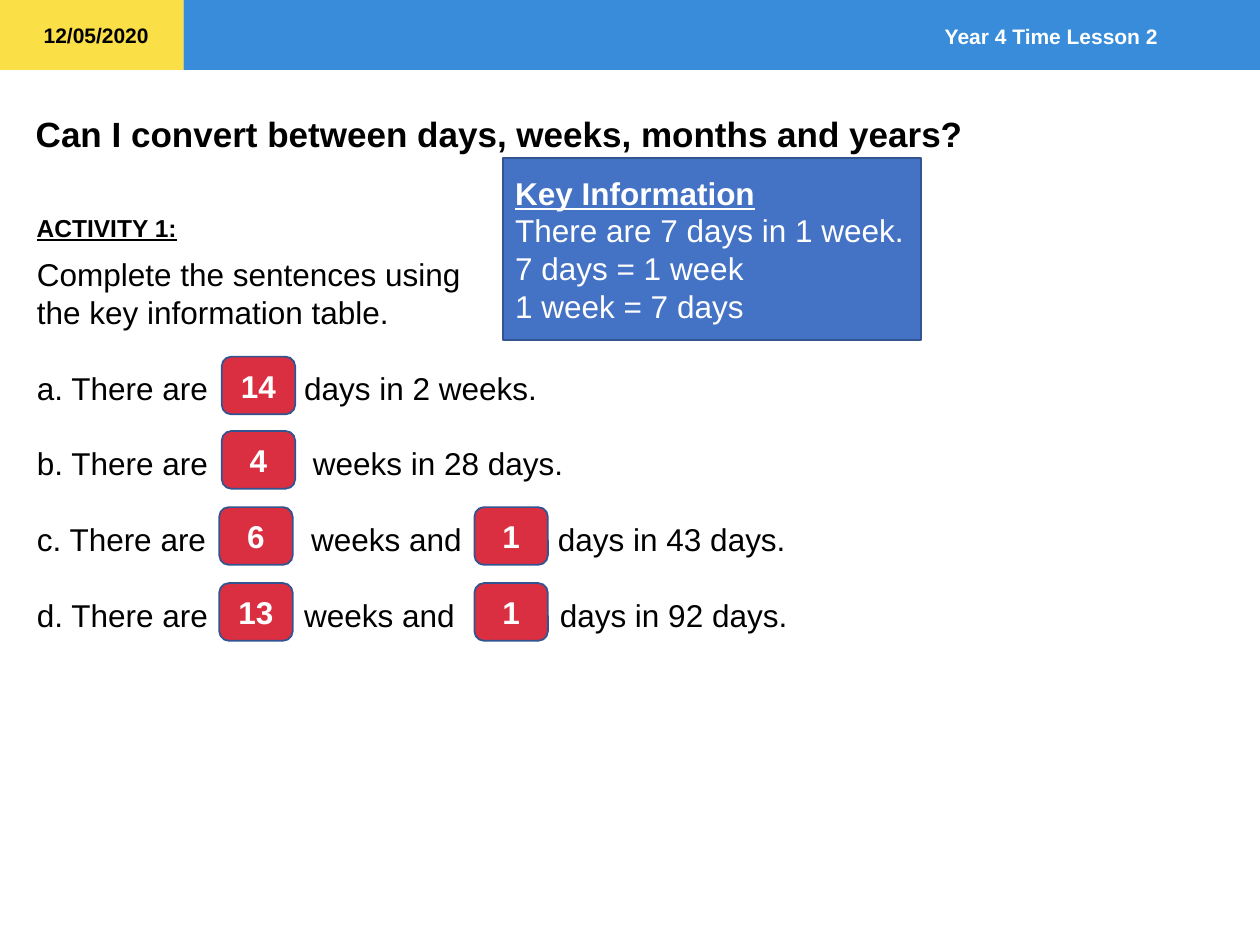
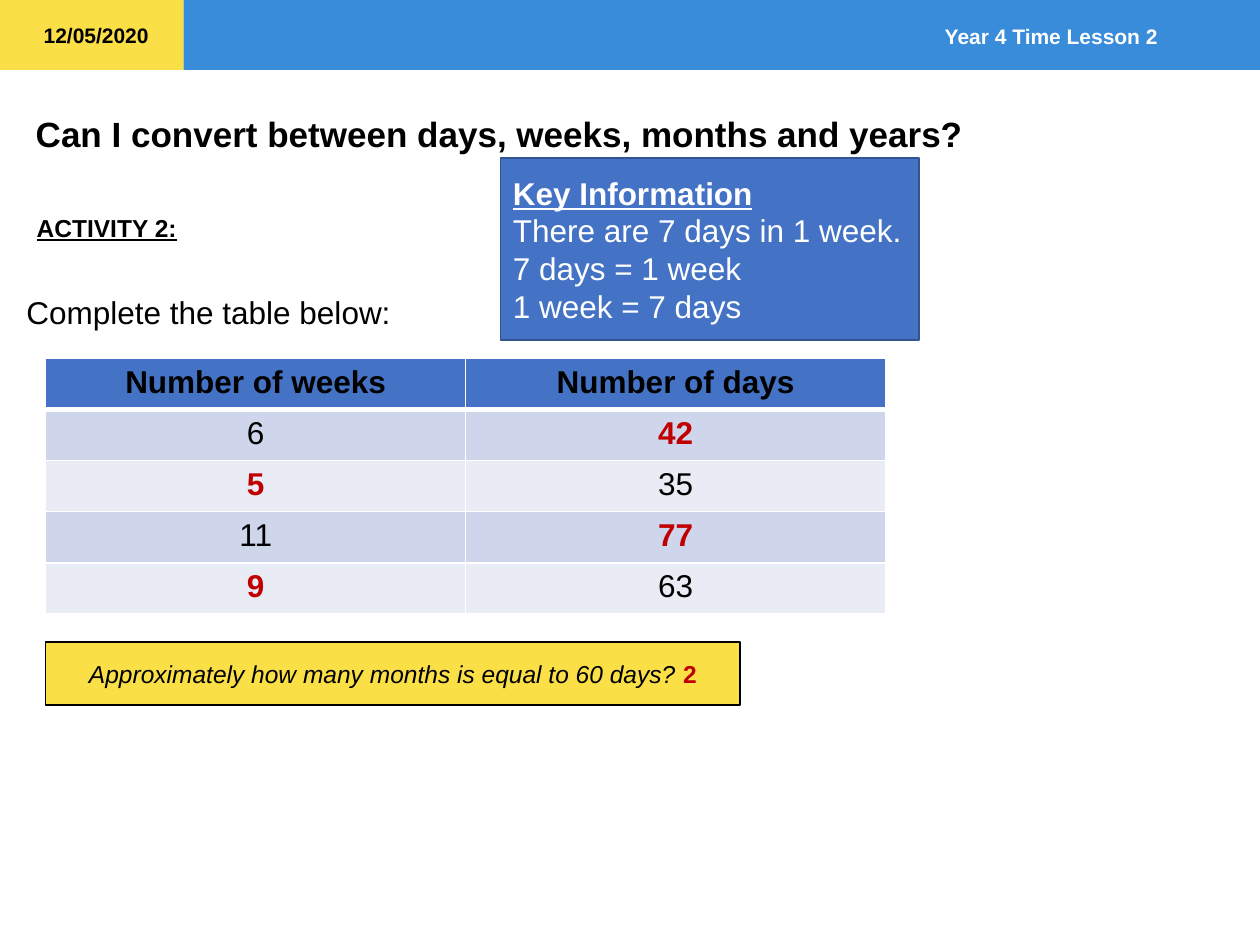
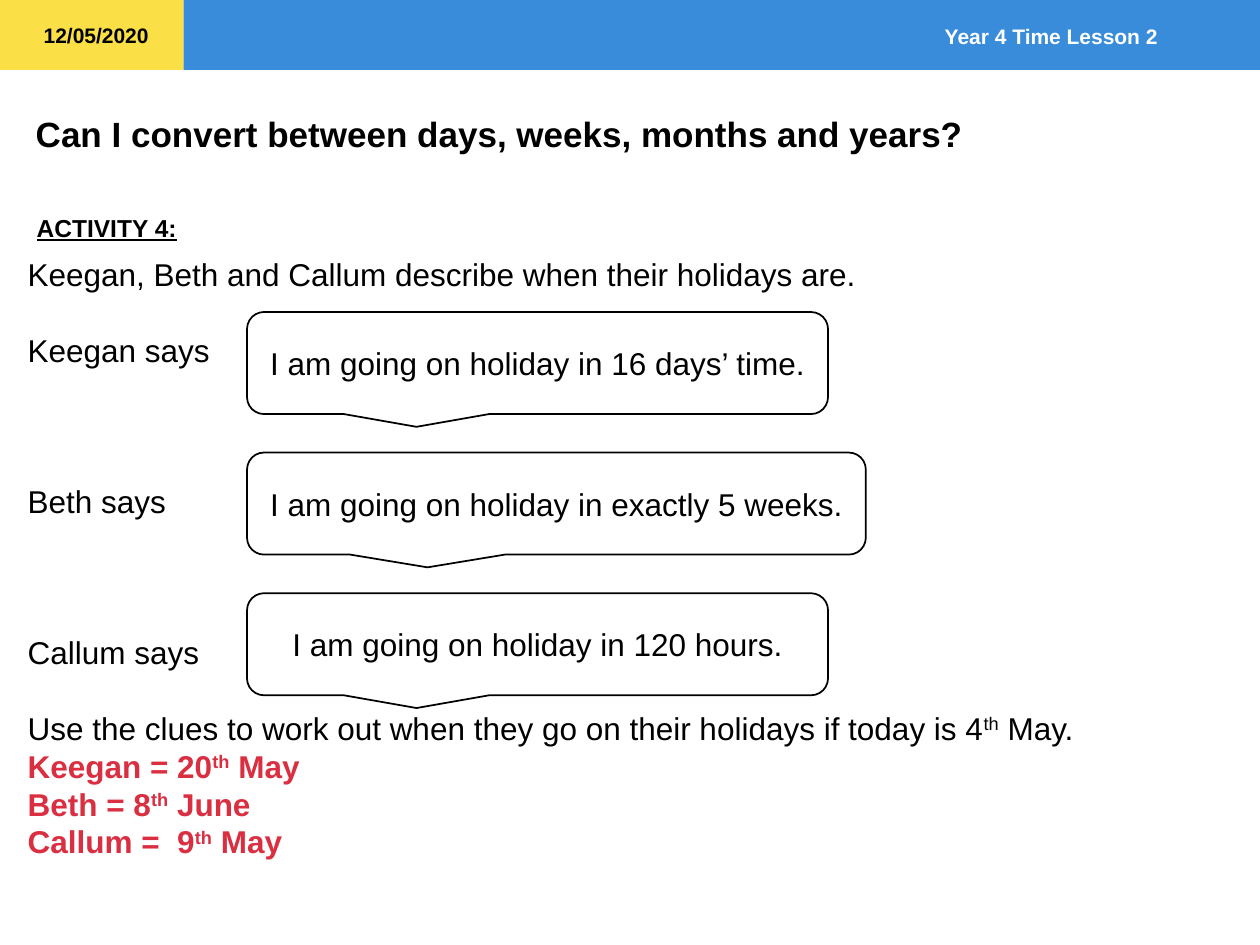
from dataclasses import dataclass

import lxml.etree
import pptx
import pptx.dml.color
import pptx.enum.shapes
import pptx.enum.text
import pptx.oxml
import pptx.oxml.ns
import pptx.util

Pt = pptx.util.Pt
RGBColor = pptx.dml.color.RGBColor
Shapes = pptx.enum.shapes.MSO_SHAPE
Align = pptx.enum.text.PP_ALIGN
Anchor = pptx.enum.text.MSO_ANCHOR
qn = pptx.oxml.ns.qn

# Shared style
FONT = "Arial"
BLACK = RGBColor(0x00, 0x00, 0x00)
WHITE = RGBColor(0xFF, 0xFF, 0xFF)
YELLOW = RGBColor(0xFA, 0xDF, 0x47)
SKY_BLUE = RGBColor(0x38, 0x8C, 0xDA)
BOX_BLUE = RGBColor(0x44, 0x72, 0xC4)
EDGE_BLUE = RGBColor(0x32, 0x54, 0x91)
ANSWER_RED = RGBColor(0xDA, 0x2E, 0x41)
TABLE_RED = RGBColor(0xC0, 0x00, 0x00)
ROW_FILLS = (RGBColor(0xCF, 0xD5, 0xEA), RGBColor(0xE9, 0xEB, 0xF5))

LINE_HEIGHT = 21.6
INSET = 3.6
BAND_HEIGHT = 40
DATE_WIDTH = 105
BODY_TOP = 142.3
NARROW_GAP, WIDE_GAP = 50, 55


@dataclass(frozen=True)
class Box:
    left: float
    top: float
    width: float
    height: float


@dataclass(frozen=True)
class Line:
    """Body line; ^ turns superscript on and off, _ is a gap for an answer."""
    text: str
    blank_lines: int = 0
    gaps: tuple[float, ...] = ()
    color: RGBColor = BLACK
    bold: bool = False


@dataclass(frozen=True)
class Answer:
    left: float
    top: float
    text: str


@dataclass(frozen=True)
class Speech:
    top: float
    width: float
    text: str


# Slide content
TITLE = "Can I convert between days, weeks, months and years?"
KEY_FACTS = ("There are 7 days in 1 week.", "7 days = 1 week", "1 week = 7 days")

SENTENCES = (
    Line("Complete the sentences using"),
    Line("the key information table."),
    Line("a. There are_days in 2 weeks.", 1, (NARROW_GAP,)),
    Line("b. There are_weeks in 28 days.", 1, (WIDE_GAP,)),
    Line("c. There are_weeks and_days in 43 days.", 1, (WIDE_GAP, NARROW_GAP)),
    Line("d. There are_weeks and_days in 92 days.", 1, (NARROW_GAP, WIDE_GAP)),
)
ANSWERS = (
    Answer(126.7, 203.8, "14"),
    Answer(126.7, 246.3, "4"),
    Answer(125.3, 289.8, "6"),
    Answer(271.1, 289.8, "1"),
    Answer(125.3, 333.2, "13"),
    Answer(271.1, 333.2, "1"),
)
TABLE_ROWS = (("Number of weeks", "Number of days"),
              ("6", "42"), ("5", "35"), ("11", "77"), ("9", "63"))
TABLE_ANSWERS = {"42", "5", "77", "9"}
HOLIDAYS = (
    Line("Keegan, Beth and Callum describe when their holidays are."),
    Line("Keegan says", 1),
    Line("Beth says", 3),
    Line("Callum says", 3),
    Line("Use the clues to work out when they go on their holidays "
         "if today is 4^th^ May.", 1),
    Line("Keegan = 20^th^ May", color=ANSWER_RED, bold=True),
    Line("Beth = 8^th^ June", color=ANSWER_RED, bold=True),
    Line("Callum =  9^th^ May", color=ANSWER_RED, bold=True),
)
SPEECHES = (
    Speech(178.3, 332, "I am going on holiday in 16 days’ time."),
    Speech(258.6, 353.6, "I am going on holiday in exactly 5 weeks."),
    Speech(339, 332, "I am going on holiday in 120 hours."),
)


# Drawing functions
def write(paragraph, text: str, *, size: float = 18, color: RGBColor = BLACK,
          bold: bool = False, italic: bool = False, underline: bool = False,
          superscript: bool = False, spacing: float = 0, align=Align.LEFT) -> None:
    paragraph.alignment = align
    run = paragraph.add_run()
    run.text = text
    font = run.font
    font.name, font.size, font.color.rgb = FONT, Pt(size), color
    font.bold, font.italic, font.underline = bold, italic, underline
    properties = run._r.get_or_add_rPr()
    if superscript:
        properties.set("baseline", "30000")
    if spacing:
        properties.set("spc", str(round(spacing * 100)))


def place(shape, box: Box) -> None:
    shape.left, shape.top = Pt(box.left), Pt(box.top)
    shape.width, shape.height = Pt(box.width), Pt(box.height)


def set_frame(shape, anchor=Anchor.TOP, wrap: bool = True):
    frame = shape.text_frame
    frame.auto_size = pptx.enum.text.MSO_AUTO_SIZE.NONE
    frame.word_wrap = wrap
    frame.vertical_anchor = anchor
    return frame


def add_box(slide, kind, box: Box, fill: RGBColor | None = None,
            line: RGBColor | None = None):
    shape = slide.shapes.add_shape(
        kind, Pt(box.left), Pt(box.top), Pt(box.width), Pt(box.height))
    shape.shadow.inherit = False
    if fill is None:
        shape.fill.background()
    else:
        shape.fill.solid()
        shape.fill.fore_color.rgb = fill
    if line is None:
        shape.line.fill.background()
    else:
        shape.line.color.rgb = line
        shape.line.width = Pt(1)
    return set_frame(shape, Anchor.MIDDLE)


def add_label(slide, box: Box, text: str, **text_format) -> None:
    shape = slide.shapes.add_textbox(
        Pt(box.left), Pt(box.top), Pt(box.width), Pt(box.height))
    write(set_frame(shape, wrap=False).paragraphs[0], text, **text_format)


def write_line(paragraph, line: Line) -> None:
    style = {"color": line.color, "bold": line.bold}
    for index, phrase in enumerate(line.text.split("_")):
        if index:
            write(paragraph, " ", spacing=line.gaps[index - 1], **style)
        for part, text in enumerate(phrase.split("^")):
            write(paragraph, text, superscript=part % 2 == 1, **style)


def fill_body(slide, box: Box, lines: tuple[Line, ...], blank_lines: int = 0) -> None:
    body = slide.placeholders[1]
    place(body, box)
    frame = set_frame(body)
    frame.margin_top = Pt(INSET + blank_lines * LINE_HEIGHT)
    for index, line in enumerate(lines):
        paragraph = frame.add_paragraph() if index else frame.paragraphs[0]
        paragraph.space_before = Pt(line.blank_lines * LINE_HEIGHT)
        properties = paragraph._p.get_or_add_pPr()
        properties.set("marL", "0")
        properties.set("indent", "0")
        lxml.etree.SubElement(properties, qn("a:buNone"))
        write_line(paragraph, line)


def add_activity_slide(presentation, number: int):
    """Add a slide with the date, lesson band, title and activity heading."""
    slide = presentation.slides.add_slide(presentation.slide_layouts[1])
    add_box(slide, Shapes.RECTANGLE, Box(0, 0, DATE_WIDTH, BAND_HEIGHT), YELLOW)
    band = add_box(slide, Shapes.RECTANGLE,
                   Box(DATE_WIDTH, 0, 720 - DATE_WIDTH, BAND_HEIGHT), SKY_BLUE)
    band.margin_right = Pt(58.3)
    band.margin_top = Pt(INSET + 1.5)
    write(band.paragraphs[0], "Year 4 Time Lesson 2", size=12, color=WHITE,
          bold=True, align=Align.RIGHT)
    place(slide.shapes.title, Box(13.2, 60.5, 673, 31.5))
    write(set_frame(slide.shapes.title).paragraphs[0], TITLE, size=20, bold=True)
    add_label(slide, Box(17.9, 9.4, 75, 21.6), "12/05/2020", size=12, bold=True)
    add_label(slide, Box(13.9, 118.1, 95, 24.2), f"ACTIVITY {number}:",
              size=14, bold=True, underline=True)
    return slide


def add_key_information(slide, left: float) -> None:
    frame = add_box(slide, Shapes.RECTANGLE, Box(left, 90.4, 239, 104),
                    BOX_BLUE, EDGE_BLUE)
    write(frame.paragraphs[0], "Key Information", color=WHITE, bold=True,
          underline=True)
    for fact in KEY_FACTS:
        write(frame.add_paragraph(), fact, color=WHITE)


def set_borders(cell, bottom: float) -> None:
    properties = cell._tc.get_or_add_tcPr()
    widths = {"a:lnL": 1, "a:lnR": 1, "a:lnT": 1, "a:lnB": bottom}
    for index, (tag, width) in enumerate(widths.items()):
        line = lxml.etree.Element(qn(tag), w=str(Pt(width)))
        fill = lxml.etree.SubElement(line, qn("a:solidFill"))
        lxml.etree.SubElement(fill, qn("a:srgbClr"), val=str(WHITE))
        properties.insert(index, line)


def add_weeks_table(slide) -> None:
    row_height = 29.2
    table = slide.shapes.add_table(
        len(TABLE_ROWS), 2, Pt(26.1), Pt(204.8), Pt(480),
        Pt(row_height * len(TABLE_ROWS))).table
    for row, values in enumerate(TABLE_ROWS):
        table.rows[row].height = Pt(row_height)
        for column, text in enumerate(values):
            cell = table.cell(row, column)
            cell.fill.solid()
            cell.fill.fore_color.rgb = ROW_FILLS[(row - 1) % 2] if row else BOX_BLUE
            set_borders(cell, bottom=1 if row else 3)
            is_answer = text in TABLE_ANSWERS
            write(cell.text_frame.paragraphs[0], text, align=Align.CENTER,
                  color=TABLE_RED if is_answer else BLACK,
                  bold=is_answer or row == 0)


# Slides
def add_sentences_slide(presentation) -> None:
    slide = add_activity_slide(presentation, 1)
    fill_body(slide, Box(13.9, BODY_TOP, 705.6, 312.5), SENTENCES)
    add_key_information(slide, 287.3)
    for answer in ANSWERS:
        frame = add_box(slide, Shapes.ROUNDED_RECTANGLE,
                        Box(answer.left, answer.top, 42, 33), ANSWER_RED, EDGE_BLUE)
        write(frame.paragraphs[0], answer.text, color=WHITE, bold=True,
              align=Align.CENTER)


def add_table_slide(presentation) -> None:
    slide = add_activity_slide(presentation, 2)
    fill_body(slide, Box(7.9, BODY_TOP, 705.6, 291),
              (Line("Complete the table below:"),), blank_lines=1)
    question = add_box(slide, Shapes.RECTANGLE, Box(26, 366.8, 397, 36),
                       YELLOW, BLACK).paragraphs[0]
    write(question, "Approximately how many months is equal to 60 days? ",
          size=14, italic=True, align=Align.CENTER)
    write(question, "2", size=14, color=TABLE_RED, bold=True, align=Align.CENTER)
    add_weeks_table(slide)
    add_key_information(slide, 286)


def add_holidays_slide(presentation) -> None:
    slide = add_activity_slide(presentation, 4)
    fill_body(slide, Box(8.6, BODY_TOP, 705.6, 356.4), HOLIDAYS)
    for speech in SPEECHES:
        frame = add_box(slide, Shapes.ROUNDED_RECTANGULAR_CALLOUT,
                        Box(141.2, speech.top, speech.width, 58.3), line=BLACK)
        write(frame.paragraphs[0], speech.text, align=Align.CENTER)


def main() -> None:
    presentation = pptx.Presentation()
    presentation.slide_width, presentation.slide_height = Pt(720), Pt(540)
    add_sentences_slide(presentation)
    add_table_slide(presentation)
    add_holidays_slide(presentation)
    presentation.save("out.pptx")


if __name__ == "__main__":
    main()
